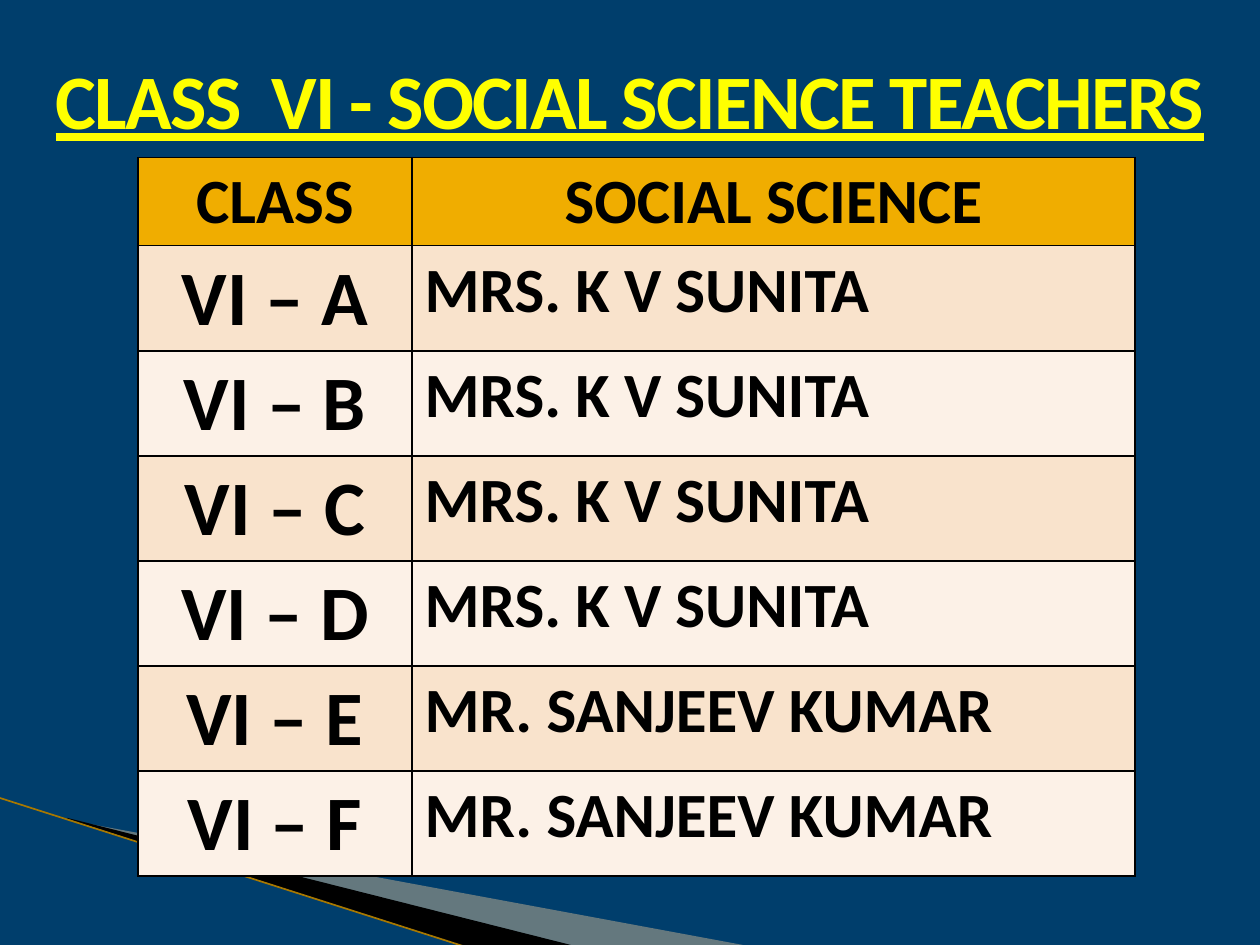
import dataclasses

import lxml.etree
import pptx
import pptx.dml.color
import pptx.enum.shapes
import pptx.enum.text
import pptx.oxml.ns
import pptx.util

Pt = pptx.util.Pt
RGBColor = pptx.dml.color.RGBColor
CENTER = pptx.enum.text.PP_ALIGN.CENTER
LEFT = pptx.enum.text.PP_ALIGN.LEFT
qn = pptx.oxml.ns.qn

NAVY = RGBColor(0x00, 0x3E, 0x6C)
YELLOW = RGBColor(0xFF, 0xFF, 0x00)
BLACK = RGBColor(0x00, 0x00, 0x00)
AMBER = RGBColor(0xF0, 0xAD, 0x00)
PEACH = RGBColor(0xF9, 0xE3, 0xCC)
CREAM = RGBColor(0xFC, 0xF1, 0xE7)
SAND = RGBColor(0xFC, 0xCF, 0x9B)
DARK_GOLD = RGBColor(0xA8, 0x78, 0x00)

FONT = "Calibri"
COLUMN_WIDTHS = (156.75, 413.1)
HEADER_HEIGHT = 50.4
ROW_HEIGHT = 60


@dataclasses.dataclass(frozen=True)
class Frame:
    left: float
    top: float
    width: float
    height: float


@dataclasses.dataclass(frozen=True)
class Streak:
    frame: Frame
    points: tuple[tuple[float, float], ...]
    color: RGBColor
    opacity: int = 100


@dataclasses.dataclass(frozen=True)
class Assignment:
    section: str
    teacher: str


STREAKS = (
    Streak(
        Frame(56.2, 393.8, 299.5, 113.8),
        ((39.6, 468.7), (428.4, 540.7), (328.3, 540.7), (39.6, 468)),
        SAND,
        40,
    ),
    Streak(
        Frame(-4.3, 455.8, 299.5, 66.2),
        ((38.2, 467.3), (329, 540.7), (267.8, 541.4), (38.9, 468)),
        BLACK,
    ),
)
ASSIGNMENTS = (
    Assignment("VI – A", "MRS. K V SUNITA"),
    Assignment("VI – B", "MRS. K V SUNITA"),
    Assignment("VI – C", "MRS. K V SUNITA"),
    Assignment("VI – D", "MRS. K V SUNITA"),
    Assignment("VI – E", "MR. SANJEEV KUMAR"),
    Assignment("VI – F", "MR. SANJEEV KUMAR"),
)


def style_font(font, size: float, color: RGBColor) -> None:
    font.name = FONT
    font.size = Pt(size)
    font.bold = True
    font.color.rgb = color


def set_frame(shape, frame: Frame) -> None:
    shift_x = shape.left - Pt(frame.left)
    shift_y = shape.top - Pt(frame.top)
    outline = next(shape._element.spPr.iter(qn("a:path")))
    for point in outline.iter(qn("a:pt")):
        point.set("x", str(int(point.get("x")) + shift_x))
        point.set("y", str(int(point.get("y")) + shift_y))
    outline.set("w", str(Pt(frame.width)))
    outline.set("h", str(Pt(frame.height)))
    shape.left, shape.top = Pt(frame.left), Pt(frame.top)
    shape.width, shape.height = Pt(frame.width), Pt(frame.height)


def draw_streak(slide, streak: Streak) -> None:
    start, *others = [(Pt(x), Pt(y)) for x, y in streak.points]
    builder = slide.shapes.build_freeform(*start)
    builder.add_line_segments(others, close=True)
    shape = builder.convert_to_shape()
    set_frame(shape, streak.frame)
    shape.shadow.inherit = False
    shape.line.fill.background()
    shape.fill.solid()
    shape.fill.fore_color.rgb = streak.color
    if streak.opacity < 100:
        color_element = shape._element.spPr.find(qn("a:solidFill"))[0]
        alpha = lxml.etree.SubElement(color_element, qn("a:alpha"))
        alpha.set("val", str(streak.opacity * 1000))


def draw_edge(slide) -> None:
    connector = slide.shapes.add_connector(
        pptx.enum.shapes.MSO_CONNECTOR.STRAIGHT, Pt(-0.7), Pt(455.8), Pt(267.1), Pt(541.4)
    )
    connector.line.color.rgb = DARK_GOLD
    connector.line.width = Pt(0.95)
    lxml.etree.SubElement(connector._element.spPr, qn("a:effectLst"))


def draw_title(slide) -> None:
    text_box = slide.shapes.add_textbox(0, 0, Pt(720), Pt(87))
    text_box.text_frame.word_wrap = True
    paragraph = text_box.text_frame.paragraphs[0]
    paragraph.alignment = CENTER
    paragraph.line_spacing = 1.5
    properties = paragraph._p.get_or_add_pPr()
    properties.set("marL", str(Pt(27)))
    properties.set("indent", str(Pt(-27)))
    run = paragraph.add_run()
    run.text = "CLASS  VI - SOCIAL SCIENCE TEACHERS"
    run._r.get_or_add_rPr().set("spc", "-100")
    style_font(paragraph.font, 44, YELLOW)
    paragraph.font.underline = True


def draw_borders(cell) -> None:
    properties = cell._tc.get_or_add_tcPr()
    for side in ("a:lnL", "a:lnR", "a:lnT", "a:lnB"):
        border = lxml.etree.SubElement(properties, qn(side), w=str(Pt(1)))
        fill = lxml.etree.SubElement(border, qn("a:solidFill"))
        lxml.etree.SubElement(fill, qn("a:srgbClr"), val=str(BLACK))


def fill_cell(cell, text: str, size: float, alignment, color: RGBColor) -> None:
    draw_borders(cell)
    cell.fill.solid()
    cell.fill.fore_color.rgb = color
    paragraph = cell.text_frame.paragraphs[0]
    paragraph.text = text
    paragraph.alignment = alignment
    style_font(paragraph.font, size, BLACK)


def draw_table(slide) -> None:
    row_count = len(ASSIGNMENTS) + 1
    table_height = HEADER_HEIGHT + ROW_HEIGHT * len(ASSIGNMENTS)
    table = slide.shapes.add_table(
        row_count, 2, Pt(78.75), Pt(90), Pt(sum(COLUMN_WIDTHS)), Pt(table_height)
    ).table
    table.first_row = False
    table.horz_banding = False
    for column, width in zip(table.columns, COLUMN_WIDTHS):
        column.width = Pt(width)
    for index, row in enumerate(table.rows):
        row.height = Pt(ROW_HEIGHT if index else HEADER_HEIGHT)
    for column, heading in enumerate(("CLASS", "SOCIAL SCIENCE")):
        fill_cell(table.cell(0, column), heading, 36, CENTER, AMBER)
    for row, assignment in enumerate(ASSIGNMENTS, start=1):
        color = PEACH if row % 2 else CREAM
        fill_cell(table.cell(row, 0), assignment.section, 44, CENTER, color)
        fill_cell(table.cell(row, 1), assignment.teacher, 36, LEFT, color)


def main() -> None:
    presentation = pptx.Presentation()
    presentation.slide_width = Pt(720)
    presentation.slide_height = Pt(540)
    slide = presentation.slides.add_slide(presentation.slide_layouts[6])
    slide.background.fill.solid()
    slide.background.fill.fore_color.rgb = NAVY
    for streak in STREAKS:
        draw_streak(slide, streak)
    draw_edge(slide)
    draw_title(slide)
    draw_table(slide)
    presentation.save("out.pptx")


if __name__ == "__main__":
    main()
